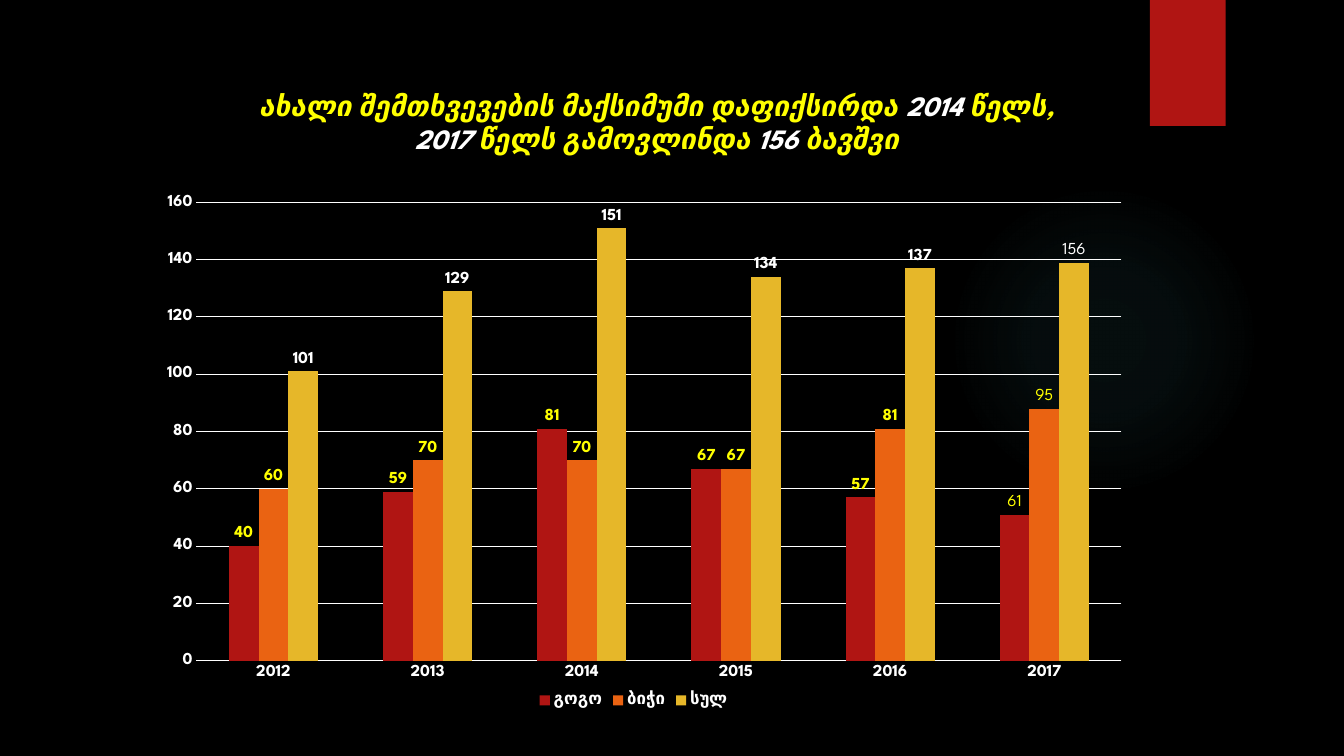
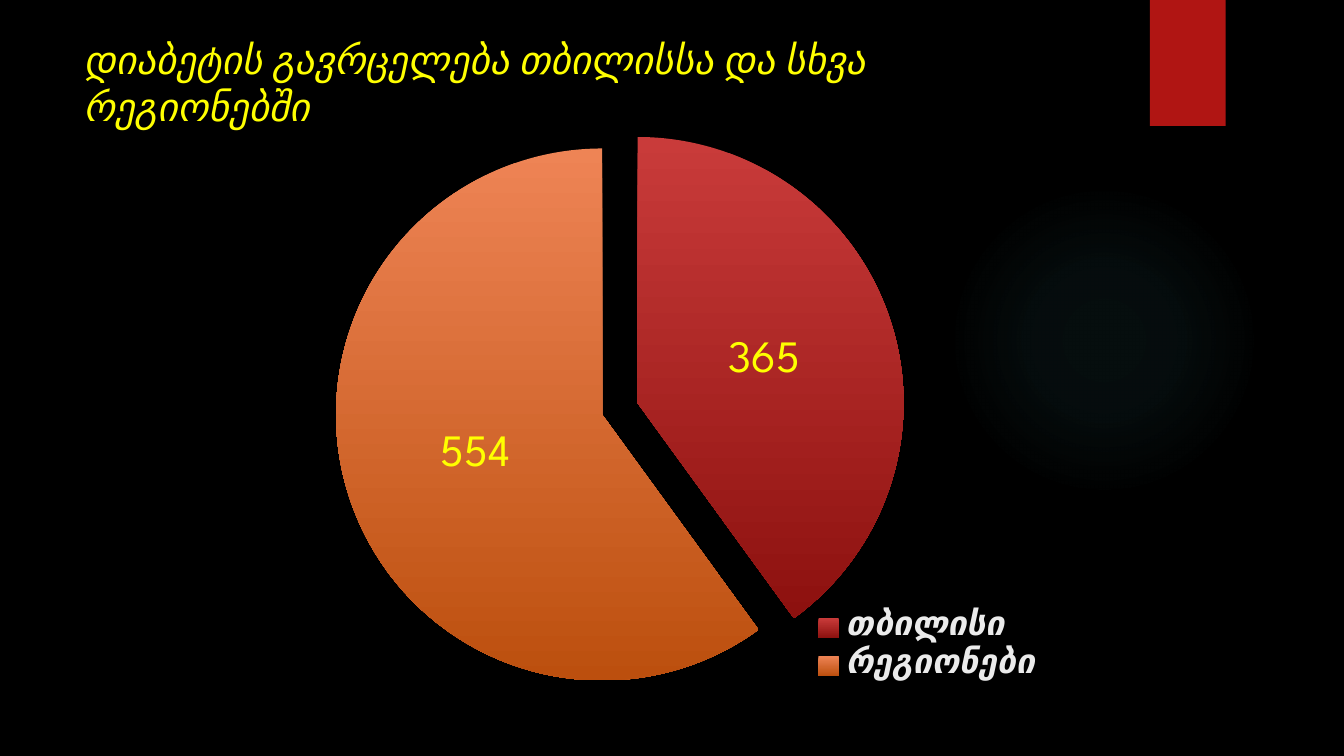
from pptx import Presentation, util as u
from pptx.chart.data import CategoryChartData
from pptx.dml.color import RGBColor
from pptx.enum import chart as charts, shapes, text
from pptx.oxml import parse_xml
from pptx.oxml.ns import nsdecls, qn

BLACK = RGBColor(0x00, 0x00, 0x00)
WHITE = RGBColor(0xFF, 0xFF, 0xFF)
PALE = RGBColor(0xEB, 0xEB, 0xEB)
YELLOW = RGBColor(0xFF, 0xFF, 0x00)
RED = RGBColor(0xB0, 0x15, 0x13)
ORANGE = RGBColor(0xEA, 0x63, 0x12)
GOLD = RGBColor(0xE6, 0xB7, 0x29)
GLOW = RGBColor(0x50, 0xB9, 0xC1)
RED_FADE = (RGBColor(0xC9, 0x3B, 0x3A), RGBColor(0x8D, 0x11, 0x0F))
ORANGE_FADE = (RGBColor(0xEE, 0x84, 0x55), RGBColor(0xBC, 0x4F, 0x0E))

FONT = "League Spartan"
CELL = u.Inches(1 / 12)  # the slide is a grid of 160 columns by 90 rows
COLUMNS, ROWS = 160, 90


def grid(*cells):
    return [u.Emu(round(cell * CELL)) for cell in cells]


def style_font(font, size, color, bold=False, italic=False):
    font.name, font.size = FONT, u.Pt(size)
    font.bold, font.italic = bold, italic
    font.color.rgb = color


def layout_xml(left, top, width, height, inner=False):
    """Manual chart layout, in shares of the chart's size."""
    target = '<c:layoutTarget val="inner"/>' if inner else ""
    sizes = zip("xywh", (left, top, width, height))
    return parse_xml(
        f'<c:layout {nsdecls("c")}><c:manualLayout>{target}'
        '<c:xMode val="edge"/><c:yMode val="edge"/>'
        + "".join(f'<c:{name} val="{share}"/>' for name, share in sizes)
        + "</c:manualLayout></c:layout>")


class Deck:
    """The shared style and the current page."""

    def __init__(self):
        self.deck = Presentation()
        self.deck.slide_width, self.deck.slide_height = grid(COLUMNS, ROWS)
        self.page = None

    def new_page(self):
        self.page = self.deck.slides.add_slide(self.deck.slide_layouts[6])
        background = self.page.background.fill
        background.solid()
        background.fore_color.rgb = BLACK
        self.glow(112.9, 22, 37, 37)
        self.shape(shapes.MSO_SHAPE.RECTANGLE, 136.9, 0, 9, 15, RED)

    def shape(self, kind, left, top, width, height, color):
        shape = self.page.shapes.add_shape(kind, *grid(left, top, width, height))
        shape.shadow.inherit = False
        shape.line.fill.background()
        shape.fill.solid()
        shape.fill.fore_color.rgb = color
        return shape

    def glow(self, *place):
        glow = self.shape(shapes.MSO_SHAPE.OVAL, *place, GLOW)
        stops = "".join(
            f'<a:gs pos="{position * 1000}"><a:srgbClr val="{GLOW}">'
            f'<a:alpha val="{alpha * 1000}"/></a:srgbClr></a:gs>'
            for position, alpha in ((0, 7), (36, 6), (69, 0)))
        solid = glow._element.spPr.find(qn("a:solidFill"))
        solid.getparent().replace(solid, parse_xml(
            f'<a:gradFill {nsdecls("a")}><a:gsLst>{stops}</a:gsLst>'
            '<a:path path="circle"><a:fillToRect l="50000" t="50000" '
            'r="50000" b="50000"/></a:path></a:gradFill>'))

    def title(self, left, top, width, height, lines, size, bold=False,
              align=text.PP_ALIGN.LEFT):
        """Each line is a list of (wording, color) spans."""
        box = self.page.shapes.add_textbox(*grid(left, top, width, height))
        box.text_frame.word_wrap = True
        para = box.text_frame.paragraphs[0]
        para.alignment = align
        for number, line in enumerate(lines):
            if number:
                para.add_line_break()
            for wording, color in line:
                span = para.add_run()
                span.text = wording
                style_font(span.font, size, color, bold, italic=True)

    def chart(self, kind, left, top, width, height, categories, series, plot):
        data = CategoryChartData()
        data.categories = categories
        for name, values in series:
            data.add_series(name, values)
        chart = self.page.shapes.add_chart(
            kind, *grid(left, top, width, height), data).chart
        chart.has_title = False
        style_font(chart.font, 10, WHITE)
        area = chart._chartSpace.chart.plotArea
        for old in area.findall(qn("c:layout")):
            area.remove(old)
        area.insert(0, layout_xml(*plot, inner=True))
        return chart

    def legend(self, chart, size, color, italic=False, place=None):
        chart.has_legend = True
        legend = chart.legend
        legend.position = charts.XL_LEGEND_POSITION.BOTTOM
        legend.include_in_layout = False
        style_font(legend.font, size, color, True, italic)
        if place:
            element = legend._element
            for old in element.findall(qn("c:layout")):
                element.remove(old)
            element.find(qn("c:legendPos")).addnext(layout_xml(*place))

    def axes(self, chart, maximum, step):
        for axis in (chart.category_axis, chart.value_axis):
            axis.major_tick_mark = charts.XL_TICK_MARK.NONE
            axis.minor_tick_mark = charts.XL_TICK_MARK.NONE
            style_font(axis.tick_labels.font, 12, WHITE, bold=True)
        values = chart.value_axis
        values.minimum_scale, values.maximum_scale = 0, maximum
        values.major_unit = step
        values.format.line.fill.background()
        for line in (chart.category_axis.format.line,
                     values.major_gridlines.format.line):
            line.color.rgb, line.width = WHITE, u.Pt(0.75)

    def labels(self, series, size, color, position, bold=False):
        labels = series.data_labels
        labels.show_value = True
        labels.position = position
        style_font(labels.font, size, color, bold)

    def point_label(self, point, wording, size, color, position):
        label = point.data_label
        span = label.text_frame.paragraphs[0].add_run()
        span.text = wording
        style_font(span.font, size, color)
        label.position = position


def new_cases(deck):
    deck.new_page()
    deck.title(20.5, 9.9, 115.4, 14, [
        [("ახალი შემთხვევების მაქსიმუმი დაფიქსირდა ", YELLOW),
         ("2014 ", WHITE), ("წელს,", YELLOW)],
        [("2017 ", WHITE), ("წელს გამოვლინდა ", YELLOW),
         ("156 ", WHITE), ("ბავშვი", YELLOW)],
    ], 20, bold=True, align=text.PP_ALIGN.CENTER)

    # Name, values, bar colour, label colour, wording of the 2017 label
    groups = [
        ("გოგო", (40, 59, 81, 67, 57, 51), RED, YELLOW, "61"),
        ("ბიჭი", (60, 70, 70, 67, 81, 88), ORANGE, YELLOW, "95"),
        ("სულ", (101, 129, 151, 134, 137, 139), GOLD, WHITE, "156"),
    ]
    years = [str(year) for year in range(2012, 2018)]
    chart = deck.chart(charts.XL_CHART_TYPE.COLUMN_CLUSTERED,
                       16.7, 22.8, 117.4, 62, years,
                       [group[:2] for group in groups],
                       (0.057, 0.021, 0.938, 0.88))
    deck.axes(chart, 160, 20)
    deck.legend(chart, 12, WHITE)
    bars = chart.plots[0]
    bars.gap_width, bars.overlap, bars.vary_by_categories = 219, 0, False
    outside = charts.XL_LABEL_POSITION.OUTSIDE_END
    for series, (_, _, fill, ink, latest) in zip(bars.series, groups):
        series.format.fill.solid()
        series.format.fill.fore_color.rgb = fill
        deck.labels(series, 12, ink, outside, bold=True)
        deck.point_label(series.points[len(years) - 1], latest, 12, ink, outside)


def regions(deck):
    deck.new_page()
    deck.title(8.8, 3.6, 120, 18.4,
               [[("დიაბეტის გავრცელება თბილისსა და სხვა რეგიონებში", YELLOW)]], 28)

    chart = deck.chart(charts.XL_CHART_TYPE.PIE, 17.3, 11.8, 112.1, 70.9,
                       ["თბილისი", "რეგიონები"], [("Series 1", (40, 60))],
                       (0.008, 0.042, 0.992, 0.956))
    deck.legend(chart, 24, PALE, italic=True, place=(0.7, 0.85, 0.26, 0.14))
    pie = chart.plots[0]
    pie.vary_by_categories = True
    series = pie.series[0]
    center = charts.XL_LABEL_POSITION.CENTER
    deck.labels(series, 32, YELLOW, center)
    for index, (fade, count) in enumerate(((RED_FADE, "365"), (ORANGE_FADE, "554"))):
        point = series.points[index]
        fill = point.format.fill
        fill.gradient()
        fill.gradient_angle = 270
        for stop, color in zip(fill.gradient_stops, fade):
            stop.color.rgb = color
        deck.point_label(point, count, 32, YELLOW, center)
    # Pull the slices apart
    series._element.find(qn("c:dPt")).addprevious(
        parse_xml(f'<c:explosion {nsdecls("c")} val="7"/>'))


def main():
    deck = Deck()
    new_cases(deck)
    regions(deck)
    deck.deck.save("out.pptx")


if __name__ == "__main__":
    main()
